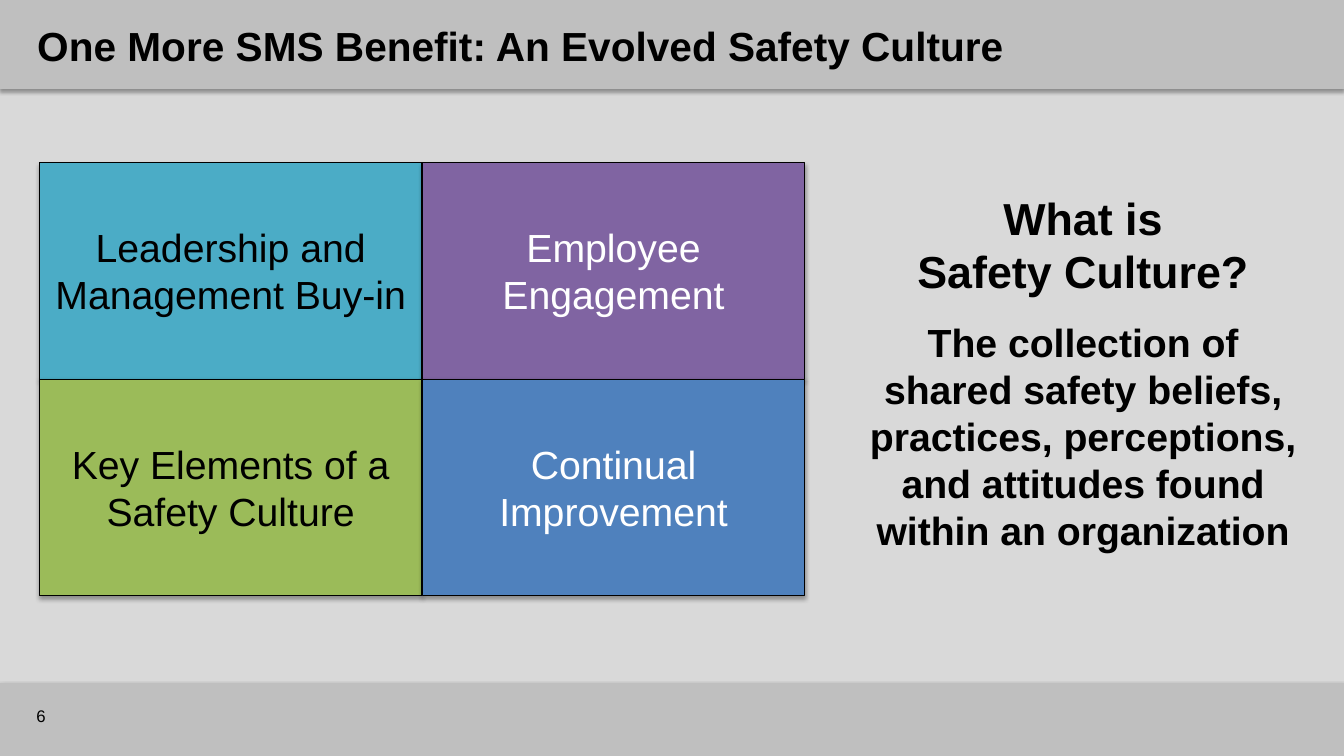
"""Build the safety culture slide: four elements beside a definition."""
from lxml import etree
from pptx import Presentation
from pptx import util as u
from pptx.dml.color import RGBColor
from pptx.enum import shapes, text
from pptx.oxml import ns

BLACK = RGBColor(0x00, 0x00, 0x00)
WHITE = RGBColor(0xFF, 0xFF, 0xFF)
PAGE = RGBColor(0xD9, 0xD9, 0xD9)
BAND = RGBColor(0xBF, 0xBF, 0xBF)
TEAL = RGBColor(0x4B, 0xAC, 0xC6)
PURPLE = RGBColor(0x80, 0x64, 0xA2)
GREEN = RGBColor(0x9B, 0xBB, 0x59)
BLUE = RGBColor(0x4F, 0x81, 0xBD)

WIDTH, HEIGHT = 960, 540
TILE_LEFT, TILE_TOP, TILE_WIDTH, TILE_HEIGHT = 28, 116, 273.5, 154.8
ELEMENTS = [
    ("Leadership and Management Buy-in", TEAL, BLACK),
    ("Employee Engagement", PURPLE, WHITE),
    ("Key Elements of a Safety Culture", GREEN, BLACK),
    ("Continual Improvement", BLUE, WHITE),
]


def write(paragraph, wording, size=28, color=BLACK, bold=False,
          align=text.PP_ALIGN.CENTER, before=0):
    paragraph.text = wording
    paragraph.alignment = align
    paragraph.space_before = u.Pt(before)
    font = paragraph.font
    font.name, font.size, font.bold = "Arial", u.Pt(size), bold
    font.color.rgb = color


def cast_shadow(shape):
    shape.shadow.inherit = False
    effects = shape._element.spPr.find(ns.qn("a:effectLst"))
    outer = etree.SubElement(
        effects, ns.qn("a:outerShdw"), blurRad=str(u.Pt(3.1)),
        dist=str(u.Pt(1.8)), dir="5400000", rotWithShape="0")
    black = etree.SubElement(outer, ns.qn("a:srgbClr"), val="000000")
    etree.SubElement(black, ns.qn("a:alpha"), val="35000")


class Deck:
    def __init__(self):
        self.show = Presentation()
        self.show.slide_width, self.show.slide_height = u.Pt(WIDTH), u.Pt(HEIGHT)
        self.slide = self.show.slides.add_slide(self.show.slide_layouts[5])
        self.slide.background.fill.solid()
        self.slide.background.fill.fore_color.rgb = PAGE

    def block(self, left, top, width, height, fill):
        block = self.slide.shapes.add_shape(
            shapes.MSO_SHAPE.RECTANGLE, *map(u.Pt, (left, top, width, height)))
        block.fill.solid()
        block.fill.fore_color.rgb = fill
        cast_shadow(block)
        return block

    def band(self, top, height):
        band = self.block(0, top, WIDTH, height, BAND)
        band.line.fill.background()
        self.slide.shapes._spTree.insert(2, band._element)

    def title(self, wording, left, top, width, height):
        title = self.slide.shapes.title
        title.left, title.top = u.Pt(left), u.Pt(top)
        title.width, title.height = u.Pt(width), u.Pt(height)
        title.text_frame.vertical_anchor = text.MSO_ANCHOR.MIDDLE
        write(title.text_frame.paragraphs[0], wording, size=29, bold=True,
              align=text.PP_ALIGN.LEFT)

    def tile(self, wording, left, top, fill, color):
        tile = self.block(left, top, TILE_WIDTH, TILE_HEIGHT, fill)
        tile.line.color.rgb = BLACK
        tile.line.width = u.Pt(0.75)
        tile.text_frame.vertical_anchor = text.MSO_ANCHOR.MIDDLE
        write(tile.text_frame.paragraphs[0], wording, color=color)

    def textbox(self, left, top, width, height, anchor=text.MSO_ANCHOR.TOP):
        frame = self.slide.shapes.add_textbox(
            *map(u.Pt, (left, top, width, height))).text_frame
        frame.word_wrap = True
        frame.vertical_anchor = anchor
        return frame


def main():
    deck = Deck()
    deck.band(488, 52)
    deck.band(0, 63.5)
    deck.title("One More SMS Benefit: An Evolved Safety Culture",
               19.4, 10, 931, 44.6)

    number = deck.textbox(18.9, 497, 72, 28.8, text.MSO_ANCHOR.MIDDLE)
    write(number.paragraphs[0], "6", size=12, align=text.PP_ALIGN.LEFT)

    for index, (wording, fill, color) in enumerate(ELEMENTS):
        row, column = divmod(index, 2)
        deck.tile(wording, TILE_LEFT + column * TILE_WIDTH,
                  TILE_TOP + row * TILE_HEIGHT, fill, color)

    definition = deck.textbox(608.4, 132.5, 330.5, 278.6)
    write(definition.paragraphs[0], "What is\vSafety Culture?",
          size=32, bold=True)
    write(definition.add_paragraph(),
          "The collection of shared safety beliefs, practices, perceptions, "
          "and attitudes found within an organization", bold=True, before=14.4)

    deck.show.save("out.pptx")


if __name__ == "__main__":
    main()
